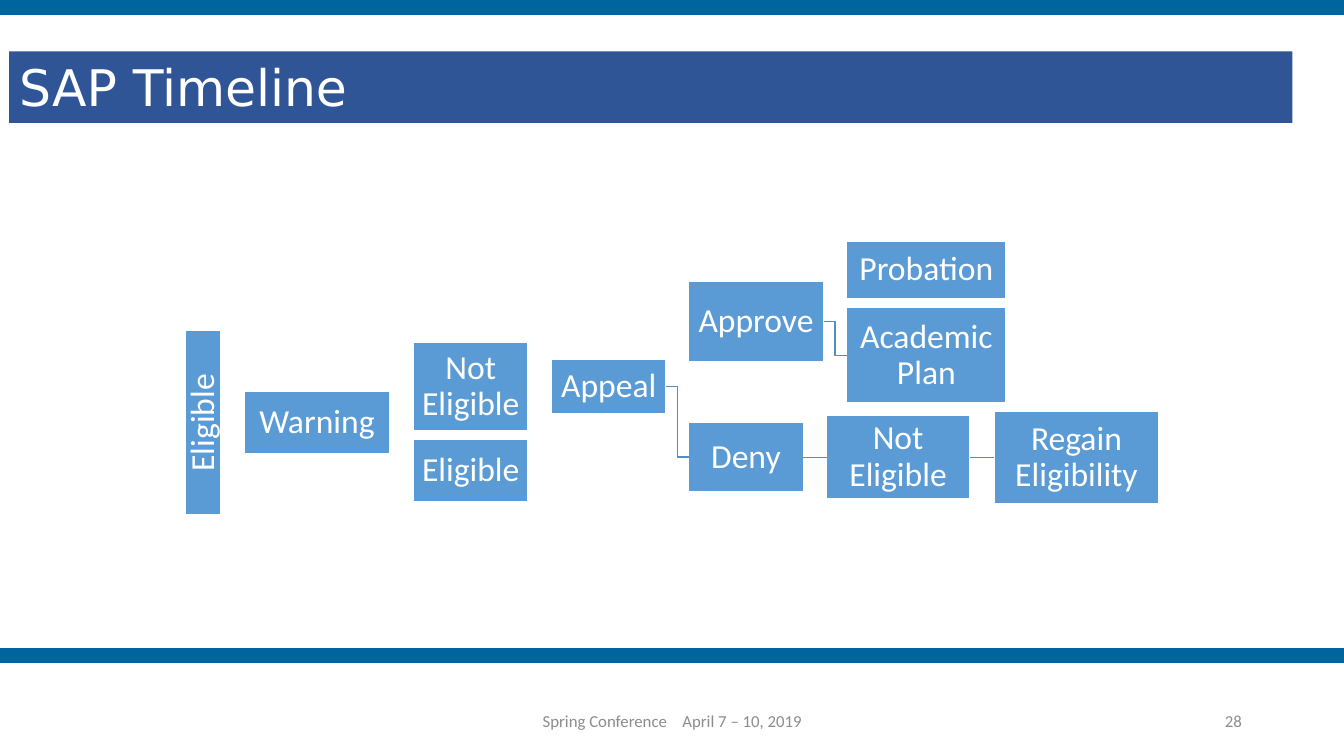
"""Build the SAP Timeline slide."""
import pptx
import pptx.util
import pptx.dml.color
import pptx.enum.shapes
import pptx.enum.text
import pptx.oxml.ns
import lxml.etree

Pt = pptx.util.Pt
RGB = pptx.dml.color.RGBColor
KIND = pptx.enum.shapes.MSO_SHAPE.RECTANGLE
LINK = pptx.enum.shapes.MSO_CONNECTOR
ALIGN = pptx.enum.text.PP_ALIGN
MID = pptx.enum.text.MSO_ANCHOR.MIDDLE
TOP = pptx.enum.text.MSO_ANCHOR.TOP

WHITE = RGB(0xFF, 0xFF, 0xFF)
TEAL = RGB(0x00, 0x65, 0x9E)
NAVY = RGB(0x2F, 0x55, 0x97)
BLUE = RGB(0x5B, 0x9B, 0xD5)
STEEL = RGB(0x53, 0x8D, 0xC1)
GRAY = RGB(0x8C, 0x8C, 0x8C)

TITLE = "SAP Timeline"
FOOT = ["Spring Conference", " ", "April 7 – 10, 2019"]
PAGE = ["28"]
BANDS = [0, 463]

# key: (text, left, middle, width, height, turn)
STEPS = {
    "start": ("Eligible", 79.2, 302, 131.8, 25.2, 270),
    "warn": ("Warning", 174.2, 301.7, 104.4, 44.6, 0),
    "fail": ("Not Eligible", 295.2, 276.1, 82.1, 62.6, 0),
    "appeal": ("Appeal", 393.8, 276.1, 82.1, 38.2, 0),
    "yes": ("Approve", 491.8, 229.7, 96.5, 57.6, 0),
    "watch": ("Probation", 604.8, 192.6, 113.8, 41, 0),
    "plan": ("Academic Plan", 604.8, 253.8, 113.8, 68.4, 0),
    "no": ("Deny", 491.8, 326.6, 82.1, 49.6, 0),
    "out": ("Not Eligible", 590.4, 326.6, 102.2, 59.8, 0),
    "regain": ("Regain Eligibility", 709.9, 326.6, 118.1, 66.2, 0),
    "pass": ("Eligible", 295.2, 336.2, 82.1, 44.6, 0),
}
LINKS = [
    ("out", "regain", LINK.STRAIGHT),
    ("no", "out", LINK.STRAIGHT),
    ("appeal", "no", LINK.ELBOW),
    ("yes", "plan", LINK.ELBOW),
]


def style(para, size, face, color, align):
    para.alignment = align
    for run in para.runs:
        run.font.size = Pt(size)
        run.font.name = face
        run.font.color.rgb = color


def add_rect(slide, left, top, width, height, fill, line):
    box = slide.shapes.add_shape(KIND, Pt(left), Pt(top), Pt(width), Pt(height))
    box.shadow.inherit = False
    box.fill.solid()
    box.fill.fore_color.rgb = fill
    box.line.color.rgb = line
    box.line.width = Pt(1)
    return box


def add_step(slide, text, left, mid, width, height, turn):
    box = add_rect(slide, left, mid - height / 2, width, height, BLUE, WHITE)
    box.rotation = turn
    frame = box.text_frame
    frame.word_wrap = True
    frame.vertical_anchor = MID
    frame.margin_left = frame.margin_right = Pt(1.44)
    frame.margin_top = frame.margin_bottom = Pt(1.44)
    frame.text = text
    para = frame.paragraphs[0]
    para.line_spacing = 0.9
    style(para, 24, "Calibri", WHITE, ALIGN.CENTER)
    return box


def add_link(slide, start, end, kind):
    link = slide.shapes.add_connector(kind, 0, 0, 0, 0)
    link.begin_connect(start, 3)
    link.end_connect(end, 1)
    link.line.color.rgb = STEEL
    link.line.width = Pt(1)
    props = link._element.spPr
    lxml.etree.SubElement(props, pptx.oxml.ns.qn("a:effectLst"))


def add_foot(slide, parts, left, width, align):
    box = slide.shapes.add_textbox(Pt(left), Pt(500.4), Pt(width), Pt(28.8))
    frame = box.text_frame
    frame.word_wrap = True
    frame.vertical_anchor = MID
    para = frame.paragraphs[0]
    for part in parts:
        run = para.add_run()
        run.text = part
        if part == " ":
            run._r.get_or_add_rPr().set("spc", "810")
    style(para, 12, "Calibri", GRAY, align)


def set_title(slide):
    title = slide.shapes.title
    title.left, title.top = Pt(6.5), Pt(36.7)
    title.width, title.height = Pt(916.6), Pt(51.1)
    title.fill.solid()
    title.fill.fore_color.rgb = NAVY
    frame = title.text_frame
    frame.text = TITLE
    frame.word_wrap = True
    frame.vertical_anchor = TOP
    frame.auto_size = pptx.enum.text.MSO_AUTO_SIZE.NONE
    style(frame.paragraphs[0], 36, "DejaVu Sans", WHITE, ALIGN.LEFT)


def main():
    deck = pptx.Presentation()
    deck.slide_width, deck.slide_height = Pt(960), Pt(540)
    slide = deck.slides.add_slide(deck.slide_layouts[5])
    set_title(slide)
    for top in BANDS:
        add_rect(slide, 0, top, 960, 10, TEAL, TEAL)
    add_foot(slide, FOOT, 318.2, 324, ALIGN.CENTER)
    add_foot(slide, PAGE, 678.2, 216, ALIGN.RIGHT)
    boxes = {key: add_step(slide, *step) for key, step in STEPS.items()}
    for start, end, kind in LINKS:
        add_link(slide, boxes[start], boxes[end], kind)
    deck.save("out.pptx")


if __name__ == "__main__":
    main()
